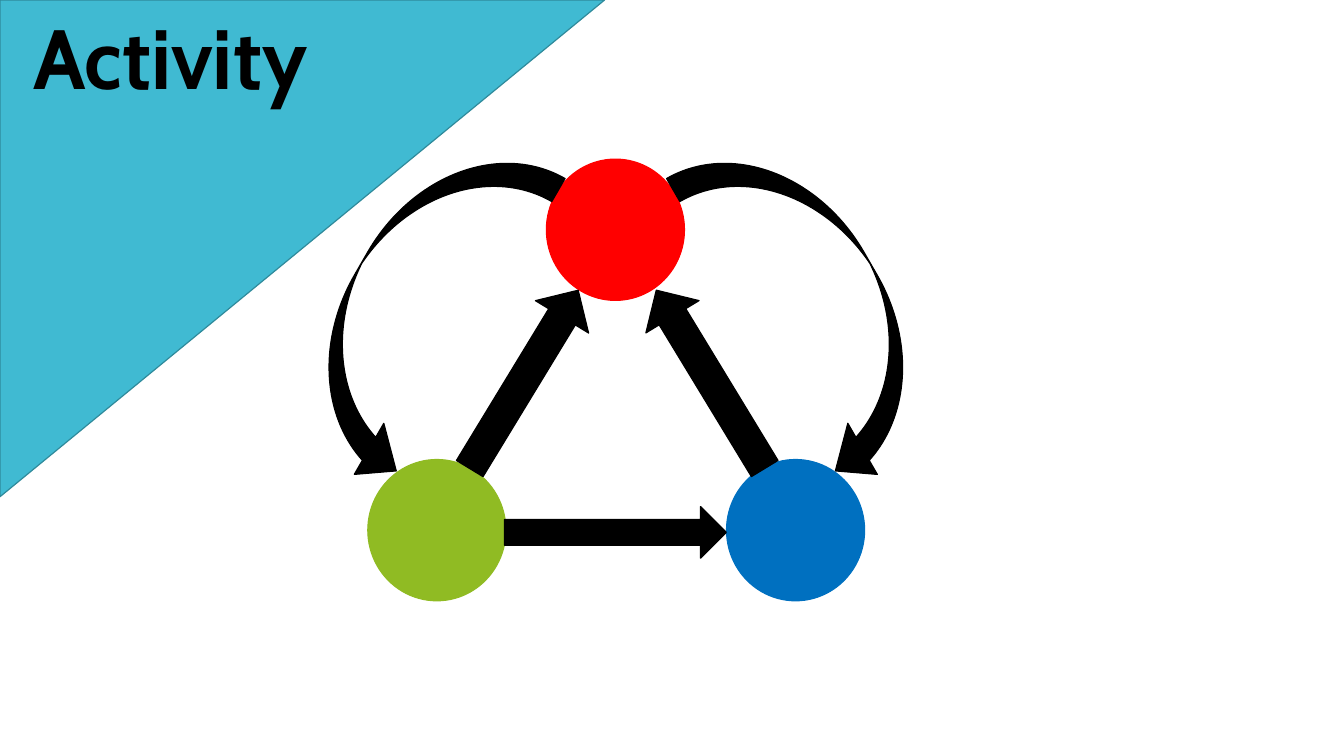
from pptx import Presentation
from pptx.dml.color import RGBColor
from pptx.enum.shapes import MSO_SHAPE as SHAPE
from pptx.enum.text import MSO_ANCHOR as ANCHOR, PP_ALIGN as ALIGN
from pptx.util import Cm, Pt

TEAL = RGBColor(0x40, 0xBA, 0xD2)
DARK_TEAL = RGBColor(0x2F, 0x8A, 0x9B)
RED = RGBColor(0xFF, 0x00, 0x00)
BLUE = RGBColor(0x00, 0x70, 0xC0)
GREEN = RGBColor(0x90, 0xBB, 0x23)
BLACK = RGBColor(0x00, 0x00, 0x00)


class SlideBuilder:
    font = "Cabin"
    title_size = Pt(60)
    line_width = Pt(0.85)

    def __init__(self, prs):
        self.slide = prs.slides.add_slide(prs.slide_layouts[5])

    def shape(self, kind, box, fill, line=None, rotation=0, flips=()):
        sp = self.slide.shapes.add_shape(kind, *map(Cm, box))
        sp.shadow.inherit = False
        sp.fill.solid()
        sp.fill.fore_color.rgb = fill
        sp.line.color.rgb = line or fill
        sp.line.width = self.line_width
        sp.rotation = rotation
        for flip in flips:
            sp._element.spPr.xfrm.set(flip, "1")
        return sp

    def node(self, left, top, color):
        return self.shape(SHAPE.OVAL, (left, top, 3.48, 3.56), color)

    def curved_arrow(self, left, rotation, flips):
        sp = self.shape(SHAPE.CURVED_UP_ARROW, (left, 5.97, 9.25, 3.38),
                        BLACK, rotation=rotation, flips=flips)
        for i, value in enumerate((0.198, 0.44, 0.258)):
            sp.adjustments[i] = value
        return sp

    def straight_arrow(self, box, rotation):
        return self.shape(SHAPE.DOWN_ARROW, box, BLACK, rotation=rotation)

    def title(self, text, box):
        sp = self.slide.shapes.title
        sp.left, sp.top, sp.width, sp.height = map(Cm, box)
        self.slide.shapes._spTree.append(sp._element)
        tf = sp.text_frame
        tf.word_wrap = False
        tf.vertical_anchor = ANCHOR.TOP
        p = tf.paragraphs[0]
        p.alignment = ALIGN.LEFT
        r = p.add_run()
        r.text = text
        r.font.name = self.font
        r.font.size = self.title_size
        r.font.bold = True
        r.font.color.rgb = BLACK


def main():
    prs = Presentation()
    prs.slide_width, prs.slide_height = Cm(33.87), Cm(19.05)
    s = SlideBuilder(prs)

    s.shape(SHAPE.RIGHT_TRIANGLE, (0, 0, 15.24, 12.52), TEAL, DARK_TEAL,
            flips=("flipV",))
    s.title("Activity", (0.58, 0, 7.7, 2.82))

    for left, top, color in ((13.77, 4.01, RED), (18.31, 11.58, BLUE),
                             (9.27, 11.58, GREEN)):
        s.node(left, top, color)

    s.curved_arrow(15.95, 60, ("flipV",))
    s.curved_arrow(5.84, 300, ("flipH", "flipV"))

    s.straight_arrow((14.86, 10.62, 1.3, 5.59), 270)
    for left, rotation in ((12.42, 211.3), (17.12, 148.7)):
        s.straight_arrow((left, 6.93, 1.57, 5.26), rotation)

    prs.save("out.pptx")


if __name__ == "__main__":
    main()
